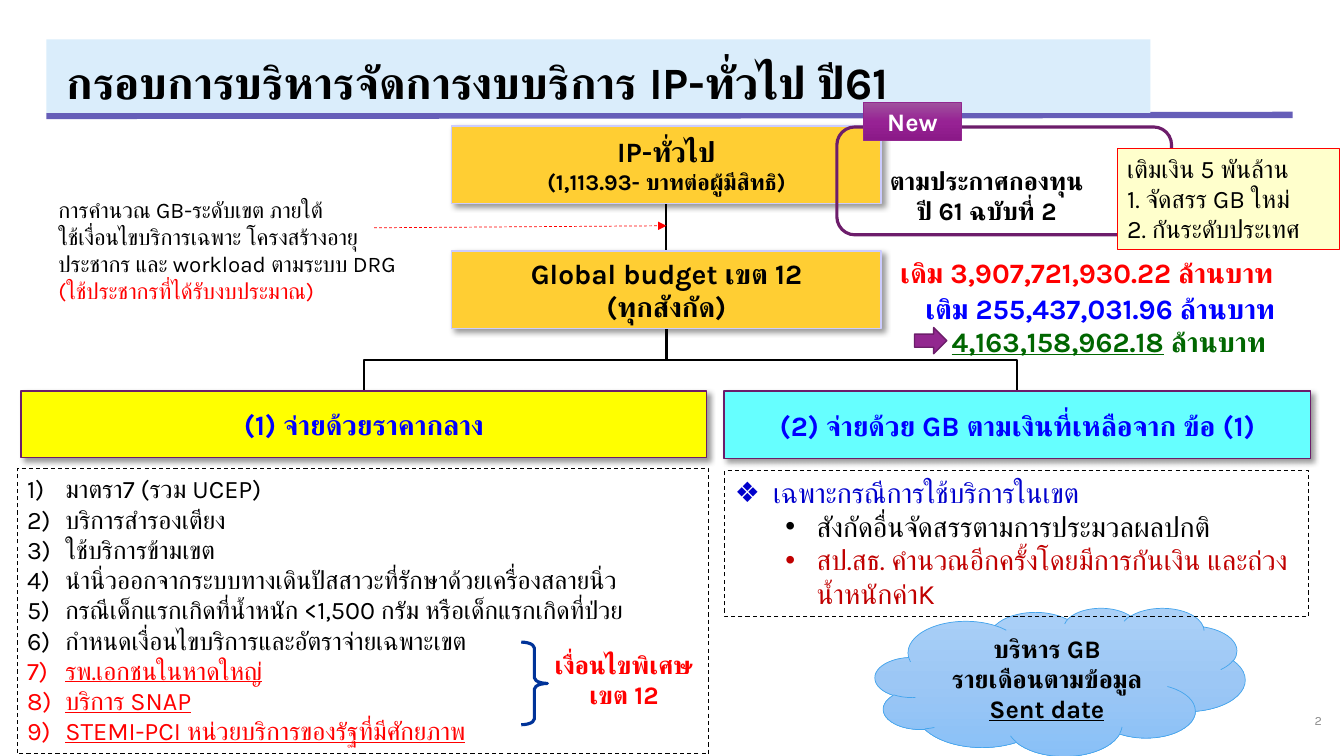
from lxml import etree
from pptx import Presentation
from pptx.dml.color import RGBColor
from pptx.enum.dml import MSO_LINE
from pptx.enum.shapes import MSO_CONNECTOR, MSO_SHAPE
from pptx.enum.text import MSO_ANCHOR, PP_ALIGN
from pptx.oxml.ns import qn
from pptx.util import Inches, Pt

LEFT, CENTER, RIGHT = PP_ALIGN.LEFT, PP_ALIGN.CENTER, PP_ALIGN.RIGHT
TOP, MIDDLE = MSO_ANCHOR.TOP, MSO_ANCHOR.MIDDLE
RECT, ROUNDED, CLOUD = MSO_SHAPE.RECTANGLE, MSO_SHAPE.ROUNDED_RECTANGLE, MSO_SHAPE.CLOUD
ARROW, BRACE = MSO_SHAPE.RIGHT_ARROW, MSO_SHAPE.RIGHT_BRACE
STRAIGHT, ELBOW = MSO_CONNECTOR.STRAIGHT, MSO_CONNECTOR.ELBOW
DASH = MSO_LINE.DASH
FONT = "Karla"
BLACK, RED, BLUE, PLUM = "000000", "FF0000", "0000FF", "6C1D6A"


def rgb(value):
    return RGBColor.from_string(value)


def child(parent, tag, **attributes):
    return etree.SubElement(parent, qn(tag), attributes)


def style_run(run, size, color, bold=False, underline=False):
    font = run.font
    font.name, font.size, font.bold = FONT, Pt(size), bold
    font.color.rgb = rgb(color)
    if underline:
        font.underline = True
    child(run._r.get_or_add_rPr(), "a:cs", typeface=FONT)


def write(shape, lines, size, color=BLACK, bold=False, align=LEFT, anchor=TOP):
    """Fill a shape with lines: a string, or a string with its own run styles."""
    frame = shape.text_frame
    frame.word_wrap, frame.vertical_anchor = True, anchor
    for index, line in enumerate(lines):
        text, own = (line, {}) if isinstance(line, str) else line
        paragraph = frame.paragraphs[0] if index == 0 else frame.add_paragraph()
        paragraph.text, paragraph.alignment = text, align
        for run in paragraph.runs:
            style_run(run, **{"size": size, "color": color, "bold": bold, **own})
    return frame.paragraphs


def text_box(slide, box, lines, size, **style):
    return write(slide.shapes.add_textbox(*map(Inches, box)), lines, size, **style)


def panel(slide, box, kind=RECT, fill=None, line=None, width=1, dash=None):
    """Add a preset shape; fill is a colour, a list of gradient colours or None."""
    shape = slide.shapes.add_shape(kind, *map(Inches, box))
    shape.shadow.inherit = False
    if isinstance(fill, list):
        shape.fill.gradient()
        shape.fill.gradient_angle = 270
        stops = shape.fill._fill._gradFill.find(qn("a:gsLst"))
        for stop in list(stops):
            stops.remove(stop)
        for index, color in enumerate(fill):
            position = index * 100000 // (len(fill) - 1)
            child(child(stops, "a:gs", pos=str(position)), "a:srgbClr", val=color)
    elif fill:
        shape.fill.solid()
        shape.fill.fore_color.rgb = rgb(fill)
    else:
        shape.fill.background()
    if line:
        shape.line.color.rgb, shape.line.width = rgb(line), Pt(width)
        shape.line.dash_style = dash
    else:
        shape.line.fill.background()
    return shape


def drop_shadow(shape):
    effects = shape._element.spPr.find(qn("a:effectLst"))
    shadow = child(effects, "a:outerShdw", blurRad=str(Pt(4)), dist=str(Pt(3)),
                   dir="2700000", algn="tl", rotWithShape="0")
    child(child(shadow, "a:srgbClr", val=BLACK), "a:alpha", val="40000")


def connect(slide, start, end, color=BLACK, width=1.5, kind=STRAIGHT):
    link = slide.shapes.add_connector(kind, *map(Inches, (*start, *end)))
    link.line.color.rgb, link.line.width = rgb(color), Pt(width)
    child(link._element.spPr, "a:effectLst")
    return link


def branch_down(slide, start, end):
    """Draw an elbow that leaves downwards, by turning a sideways one."""
    rise, run = end[1] - start[1], abs(end[0] - start[0])
    left = (start[0] + end[0] - rise) / 2
    top = (start[1] + end[1] - run) / 2
    link = connect(slide, (left, top), (left + rise, top + run), kind=ELBOW)
    frame = link._element.spPr.find(qn("a:xfrm"))
    if end[0] < start[0]:
        frame.set("rot", "5400000")
    else:
        frame.set("rot", "16200000")
        frame.set("flipH", "1")


def add_bullet(paragraph, indent, hanging, tag, **attributes):
    props = paragraph._p.get_or_add_pPr()
    props.set("marL", str(Inches(indent)))
    props.set("indent", str(-Inches(hanging)))
    child(props, "a:buFont", typeface="Arial")
    child(props, tag, **attributes)


def header(slide, box):
    left, top, width, height = box
    connect(slide, (left, top + 0.76), (left + 12.36, top + 0.75), "665EB8", 4.5)
    band = panel(slide, box, fill="DAEDFB")
    title, = write(band, ["กรอบการบริหารจัดการงบบริการ IP-ทั่วไป ปี61"], 32,
                   bold=True, anchor=MIDDLE)
    band.text_frame.margin_left = Inches(0.2)
    title.line_spacing = 1.2


def heading_card(slide, box, lines, fill, line, color):
    card = panel(slide, box, fill=fill, line=line)
    drop_shadow(card)
    write(card, lines, 20, color=color, bold=True, align=CENTER, anchor=MIDDLE)


def budget_flow(slide, box):
    left, top, width, height = box
    trunk, second, bottom = left + 2.13, top + 1.24, top + 2.01
    branch_y = top + 2.63
    for end_x in (3.61, 10.09):
        branch_down(slide, (trunk, bottom), (end_x, branch_y))
    connect(slide, (trunk, top + height), (trunk, second))
    cards = [
        (top, ["IP-ทั่วไป", ("(1,113.93- บาทต่อผู้มีสิทธิ)", {"size": 16})]),
        (second, ["Global budget เขต 12", "(ทุกสังกัด)"]),
    ]
    for card_top, lines in cards:
        heading_card(slide, (left, card_top, width, height), lines,
                     "FFCE33", "CCCCFF", BLACK)
    heading_card(slide, (0.21, branch_y, 6.8, 0.66), ["(1) จ่ายด้วยราคากลาง"],
                 "FFFF00", PLUM, BLUE)
    heading_card(slide, (7.18, branch_y, 5.82, 0.67),
                 ["(2) จ่ายด้วย GB ตามเงินที่เหลือจาก ข้อ (1)"], "66FFFF", PLUM, BLUE)


def calculation_note(slide, box):
    left, top = box[:2]
    text_box(slide, box, [
        "การคำนวณ GB-ระดับเขต ภายใต้",
        "ใช้เงื่อนไขบริการเฉพาะ โครงสร้างอายุประชากร และ workload ตามระบบ DRG",
        ("(ใช้ประชากรที่ได้รับงบประมาณ)", {"color": RED})], 16)
    pointer = connect(slide, (left + 3.23, top + 0.36), (left + 6.13, top + 0.34), RED, 0.5)
    pointer.line.dash_style = DASH
    child(pointer.line._get_or_add_ln(), "a:tailEnd", type="triangle")


def fixed_price_list(slide, box):
    left, top = box[:2]
    special = {"color": RED, "underline": True}
    items = write(panel(slide, box, line=BLACK, width=0.75, dash=DASH), [
        "มาตรา7 (รวม UCEP)",
        "บริการสำรองเตียง",
        "ใช้บริการข้ามเขต",
        "นำนิ่วออกจากระบบทางเดินปัสสาวะที่รักษาด้วยเครื่องสลายนิ่ว",
        "กรณีเด็กแรกเกิดที่น้ำหนัก <1,500 กรัม หรือเด็กแรกเกิดที่ป่วย",
        "กำหนดเงื่อนไขบริการและอัตราจ่ายเฉพาะเขต",
        ("รพ.เอกชนในหาดใหญ่", special),
        ("บริการ SNAP", special),
        ("STEMI-PCI หน่วยบริการของรัฐที่มีศักยภาพ", special)], 18)
    for item in items:
        add_bullet(item, 0.38, 0.38, "a:buAutoNum", type="arabicParenR")
    brace = panel(slide, (left + 5, top + 1.72, 0.26, 0.82), BRACE,
                  line="003399", width=2.25)
    brace.adjustments[0] = 0.22
    text_box(slide, (left + 5.17, top + 1.74, 1.7, 0.71), ["เงื่อนไขพิเศษ", "เขต 12"],
             18, color=RED, bold=True, align=CENTER)


def remaining_budget(slide, box):
    left, top = box[:2]
    cloud = panel(slide, (left + 1.49, top + 1.36, 3.67, 1.47), CLOUD,
                  ["ABD0F7", "9CC7F5", "89C0F7"], "45A5ED", 0.5)
    write(cloud, ["บริหาร GB", "รายเดือนตามข้อมูล", ("Sent date", {"underline": True})],
          18, bold=True, align=CENTER, anchor=MIDDLE)
    main, *details = write(panel(slide, box, line=BLACK, width=0.75, dash=DASH), [
        ("เฉพาะกรณีการใช้บริการในเขต", {"color": "0000CC"}),
        "สังกัดอื่นจัดสรรตามการประมวลผลปกติ",
        ("สป.สธ. คำนวณอีกครั้งโดยมีการกันเงิน และถ่วงน้ำหนักค่าK", {"color": "C00000"})], 20)
    add_bullet(main, 0.38, 0.38, "a:buChar", char="❖")
    for detail in details:
        detail.level = 1
        add_bullet(detail, 0.81, 0.31, "a:buChar", char="•")


def budget_totals(slide, box):
    left, top, width, height = box
    text_box(slide, (left, top, width, 0.44), ["เดิม 3,907,721,930.22 ล้านบาท"],
             20, color=RED, bold=True)
    panel(slide, (left + 0.24, top + 0.76, 0.32, 0.26), ARROW, "92278F", PLUM)
    green = "006600"
    added, total = text_box(
        slide, (left + 0.17, top + 0.35, width - 0.4, height - 0.35),
        ["เติม 255,437,031.96 ล้านบาท",
         ("4,163,158,962.18", {"color": green, "underline": True})],
        20, color=BLUE, bold=True)
    unit = total.add_run()
    unit.text = " ล้านบาท"
    style_run(unit, 20, green, True)
    for paragraph, indent in ((added, 0.08), (total, 0.34)):
        paragraph._p.get_or_add_pPr().set("marL", str(Inches(indent)))


def announcement(slide, box):
    left, top = box[:2]
    panel(slide, box, ROUNDED, line="6D1D6B", width=2.25)
    badge = panel(slide, (left + 0.26, top - 0.24, 0.98, 0.37),
                  fill=["9F519D", "972294", "8B1988"], line="92278F", width=0.5)
    write(badge, ["New"], 18, color="FFFFFF", bold=True, align=CENTER, anchor=MIDDLE)
    text_box(slide, (left + 0.38, top + 0.33, 2.21, 0.6),
             ["ตามประกาศกองทุน", "ปี 61 ฉบับที่ 2"], 18, bold=True, align=CENTER)
    extra_funds = panel(slide, (left + 2.78, top + 0.21, 2.21, 1.01),
                        fill="FFFFCC", line=RED, width=0.75)
    write(extra_funds, ["เติมเงิน 5 พันล้าน", "1. จัดสรร GB ใหม่", "2. กันระดับประเทศ"], 18)


def main():
    deck = Presentation()
    deck.slide_width, deck.slide_height = Inches(13.33), Inches(7.5)
    slide = deck.slides.add_slide(deck.slide_layouts[6])
    header(slide, (0.46, 0.39, 10.95, 0.73))
    text_box(slide, (10.21, 6.95, 3, 0.4), ["2"], 9, color="8C8C8C",
             align=RIGHT, anchor=MIDDLE)
    budget_flow(slide, (4.48, 1.25, 4.26, 0.77))
    calculation_note(slide, (0.48, 1.9, 3.61, 1.72))
    fixed_price_list(slide, (0.17, 4.65, 6.86, 2.83))
    remaining_budget(slide, (7.19, 4.67, 5.79, 1.45))
    announcement(slide, (8.3, 1.26, 3.32, 1.07))
    budget_totals(slide, (8.83, 2.49, 4.7, 1.12))
    deck.save("out.pptx")


if __name__ == "__main__":
    main()
